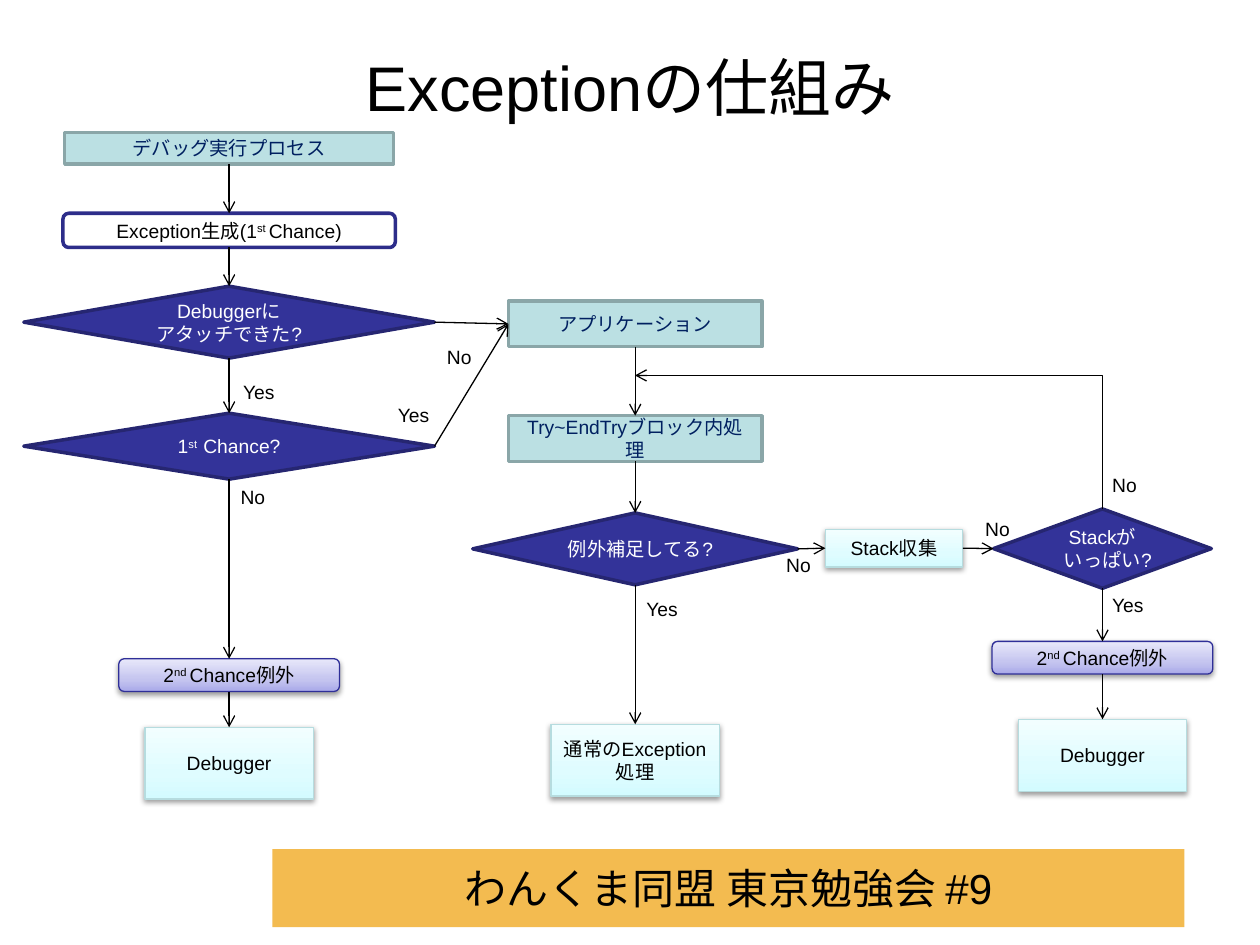
from copy import deepcopy
from itertools import pairwise

from lxml.etree import SubElement
from pptx import Presentation
from pptx.dml.color import RGBColor
from pptx.enum.shapes import MSO_CONNECTOR, MSO_SHAPE
from pptx.enum.text import MSO_ANCHOR, MSO_AUTO_SIZE, PP_ALIGN
from pptx.oxml.ns import qn
from pptx.util import Cm, Pt

BLACK = RGBColor(0x00, 0x00, 0x00)
WHITE = RGBColor(0xFF, 0xFF, 0xFF)
NAVY = RGBColor(0x00, 0x20, 0x60)
ORANGE = RGBColor(0xF3, 0xBB, 0x50)
TEAL = RGBColor(0xBB, 0xE0, 0xE3)
TEAL_EDGE = RGBColor(0x8A, 0xA6, 0xA8)
INDIGO = RGBColor(0x33, 0x33, 0x99)
INDIGO_EDGE = RGBColor(0x26, 0x26, 0x71)
EVENT_EDGE = RGBColor(0x2D, 0x2D, 0x8A)
ICE = [RGBColor(0xD3, 0xFB, 0xFF), RGBColor(0xDF, 0xFC, 0xFF), RGBColor(0xF2, 0xFE, 0xFF)]
ICE_EDGE = RGBColor(0xB6, 0xDC, 0xDF)
LILAC = [RGBColor(0xA9, 0xA9, 0xE9), RGBColor(0xC4, 0xC4, 0xEF), RGBColor(0xE8, 0xE8, 0xFA)]
LILAC_EDGE = RGBColor(0x2F, 0x2F, 0x98)

# Role: preset shape, fill (a list is a gradient), edge, edge width, text colour
ROLES = {
    "process": (MSO_SHAPE.FLOWCHART_PROCESS, TEAL, TEAL_EDGE, 2, NAVY),
    "event": (MSO_SHAPE.FLOWCHART_ALTERNATE_PROCESS, WHITE, EVENT_EDGE, 2, BLACK),
    "decision": (MSO_SHAPE.FLOWCHART_DECISION, INDIGO, INDIGO_EDGE, 2, WHITE),
    "result": (MSO_SHAPE.FLOWCHART_PROCESS, ICE, ICE_EDGE, 0.75, BLACK),
    "second": (MSO_SHAPE.FLOWCHART_ALTERNATE_PROCESS, LILAC, LILAC_EDGE, 0.75, BLACK),
}
TOP, LEFT, BOTTOM, RIGHT = range(4)  # connection sites
SECOND_CHANCE = "2^nd ^Chance例外"


def write_text(frame, text, *, size=11, color=BLACK, align=PP_ALIGN.CENTER):
    """Each line is a paragraph; pieces between carets are superscript."""
    for index, line in enumerate(text.split("\n")):
        paragraph = frame.add_paragraph() if index else frame.paragraphs[0]
        paragraph.alignment = align
        for part, piece in enumerate(line.split("^")):
            run = paragraph.add_run()
            run.text = piece
            run.font.name = "Arial"
            run.font.size = Pt(size)
            run.font.color.rgb = color
            if part % 2:
                run.font._element.set("baseline", "30000")


def shade(shape, colors):
    """Upward three-stop gradient with a soft shadow below."""
    shape.fill.gradient()
    shape.fill.gradient_angle = 90
    stop_list = shape._element.spPr.find(".//" + qn("a:gsLst"))
    stop_list.insert(1, deepcopy(stop_list[0]))
    for stop, color, position in zip(shape.fill.gradient_stops, colors, (0, 0.35, 1)):
        stop.color.rgb = color
        stop.position = position
    effects = shape._element.spPr.find(qn("a:effectLst"))
    shadow = SubElement(effects, qn("a:outerShdw"), blurRad="40000", dist="20000",
                        dir="5400000", rotWithShape="0")
    tint = SubElement(shadow, qn("a:srgbClr"), val="000000")
    SubElement(tint, qn("a:alpha"), val="38000")


def add_node(slide, role, center, top, width, height, text):
    preset, fill, edge, edge_width, color = ROLES[role]
    node = slide.shapes.add_shape(preset, Cm(center - width / 2), Cm(top), Cm(width), Cm(height))
    node.shadow.inherit = False
    if isinstance(fill, list):
        shade(node, fill)
    else:
        node.fill.solid()
        node.fill.fore_color.rgb = fill
    node.line.color.rgb = edge
    node.line.width = Pt(edge_width)
    node.text_frame.word_wrap = True
    node.text_frame.vertical_anchor = MSO_ANCHOR.MIDDLE
    write_text(node.text_frame, text, color=color)
    return node


def add_column(slide, center, top, rows):
    """Stack nodes on one axis and link each to the next."""
    nodes = [add_node(slide, role, center, top + offset, width, height, text)
             for role, offset, width, height, text in rows]
    for upper, lower in pairwise(nodes):
        link(slide, upper, BOTTOM, lower, TOP)
    return nodes


def style_arrow(arrow):
    arrow.line.color.rgb = BLACK
    arrow.line.width = Pt(0.75)
    SubElement(arrow.line._get_or_add_ln(), qn("a:tailEnd"), type="arrow")
    SubElement(arrow._element.spPr, qn("a:effectLst"))


def link(slide, source, source_site, target, target_site):
    arrow = slide.shapes.add_connector(MSO_CONNECTOR.STRAIGHT, 0, 0, 0, 0)
    arrow.begin_connect(source, source_site)
    arrow.end_connect(target, target_site)
    style_arrow(arrow)


def add_loop(slide, start, end):
    """Arrow that goes up from start, then left to end."""
    (start_x, start_y), (end_x, end_y) = start, end
    rise, run = start_y - end_y, start_x - end_x
    arrow = slide.shapes.add_connector(MSO_CONNECTOR.ELBOW, 0, 0, 0, 0)
    arrow.left = Cm((start_x + end_x - rise) / 2)
    arrow.top = Cm((start_y + end_y - run) / 2)
    arrow.width, arrow.height = Cm(rise), Cm(run)
    properties = arrow._element.spPr
    properties.find(qn("a:prstGeom")).set("prst", "bentConnector2")
    frame = properties.find(qn("a:xfrm"))
    frame.set("rot", "16200000")
    frame.set("flipV", "1")
    style_arrow(arrow)


def add_answers(slide, left, top, answers):
    for text, x, y in answers:
        width = 1.19 if text == "Yes" else 1.02
        answer = slide.shapes.add_textbox(Cm(left + x), Cm(top + y), Cm(width), Cm(0.73))
        answer.text_frame.word_wrap = False
        answer.text_frame.auto_size = MSO_AUTO_SIZE.SHAPE_TO_FIT_TEXT
        write_text(answer.text_frame, text, align=PP_ALIGN.LEFT)


def build_debug_flow(slide, left, top, width):
    nodes = add_column(slide, left + width / 2, top, [
        ("process", 0, 6.63, 0.64, "デバッグ実行プロセス"),
        ("event", 1.63, 6.7, 0.69, "Exception生成(1^st ^Chance)"),
        ("decision", 3.1, width, 1.45, "Debuggerに\nアタッチできた?"),
        ("decision", 5.66, width, 1.33, "1^st  ^Chance?"),
        ("second", 10.61, 4.45, 0.66, SECOND_CHANCE),
        ("result", 11.99, 3.39, 1.45, "Debugger"),
    ])
    add_answers(slide, left, top, [("Yes", 4.17, 4.87), ("No", 4.12, 6.98),
                                   ("No", 8.28, 4.16), ("Yes", 7.29, 5.33)])
    return nodes[2:4]


def build_application_flow(slide, left, top, width):
    nodes = add_column(slide, left + width / 2, top, [
        ("process", 0, 5.11, 0.92, "アプリケーション"),
        ("process", 2.31, 5.11, 0.92, "Try~EndTryブロック内処理"),
        ("decision", 4.27, width, 1.45, "例外補足してる?"),
        ("result", 8.53, 3.39, 1.45, "通常のException処理"),
    ])
    add_answers(slide, left, top, [("Yes", 3.25, 5.84), ("No", 6.07, 4.95)])
    return nodes[0], nodes[2]


def build_stack_flow(slide, left, top, width):
    collect_width, decision_width = 2.77, 4.39
    axis = left + width - decision_width / 2
    collect = add_node(slide, "result", left + collect_width / 2, top + 0.41,
                       collect_width, 0.76, "Stack収集")
    full = add_column(slide, axis, top, [
        ("decision", 0, decision_width, 1.6, "Stackが\nいっぱい?"),
        ("second", 2.67, 4.45, 0.66, SECOND_CHANCE),
        ("result", 4.24, 3.39, 1.45, "Debugger"),
    ])[0]
    link(slide, collect, RIGHT, full, LEFT)
    add_answers(slide, left, top, [("No", 2.97, 0.05), ("Yes", 5.53, 1.58), ("No", 5.53, -0.84)])
    return collect, (axis, top)


def build_title(slide, left, top, width, height):
    title = slide.shapes.title
    title.left, title.top, title.width, title.height = map(Cm, (left, top, width, height))
    title.text_frame.vertical_anchor = MSO_ANCHOR.MIDDLE
    write_text(title.text_frame, "Exceptionの仕組み", size=36)


def build_footer(slide, left, top, width, height):
    band = slide.shapes.add_shape(MSO_SHAPE.RECTANGLE, *map(Cm, (left, top, width, height)))
    band.shadow.inherit = False
    band.fill.solid()
    band.fill.fore_color.rgb = ORANGE
    band.line.fill.background()
    band.text_frame.vertical_anchor = MSO_ANCHOR.MIDDLE
    write_text(band.text_frame, "わんくま同盟 東京勉強会 #9", size=24)


def main():
    deck = Presentation()
    deck.slide_width, deck.slide_height = Cm(25.4), Cm(19.05)
    slide = deck.slides.add_slide(deck.slide_layouts[5])
    build_footer(slide, 5.49, 17.12, 18.39, 1.57)
    build_title(slide, 1.27, 0.76, 22.86, 1.96)

    # Three flows, from left to right
    debug_checks = build_debug_flow(slide, 0.48, 2.67, 8.28)
    application, caught = build_application_flow(slide, 9.53, 6.07, 6.55)
    collect, loop_start = build_stack_flow(slide, 16.64, 10.26, 7.78)

    # Links between the flows
    for check in debug_checks:
        link(slide, check, RIGHT, application, LEFT)
    link(slide, caught, RIGHT, collect, LEFT)
    add_loop(slide, loop_start, (12.8, 7.57))
    deck.save("out.pptx")


if __name__ == "__main__":
    main()
